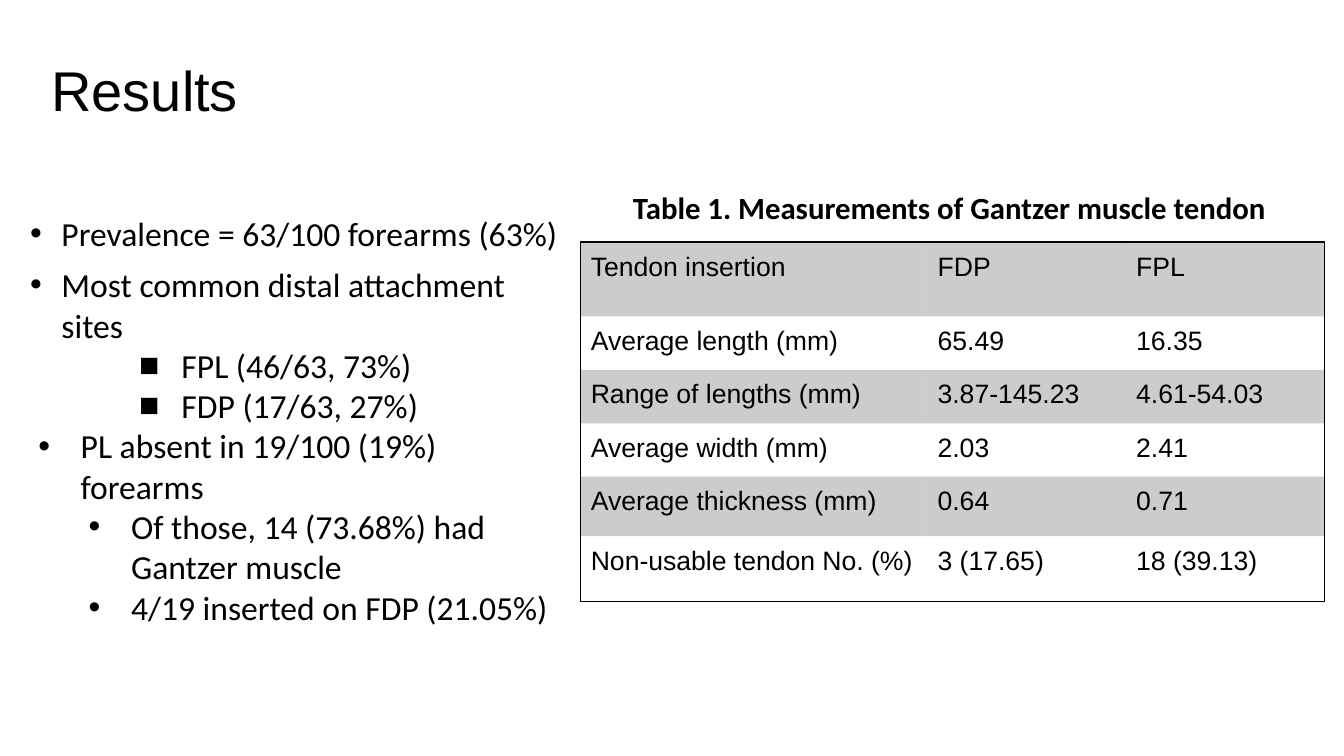
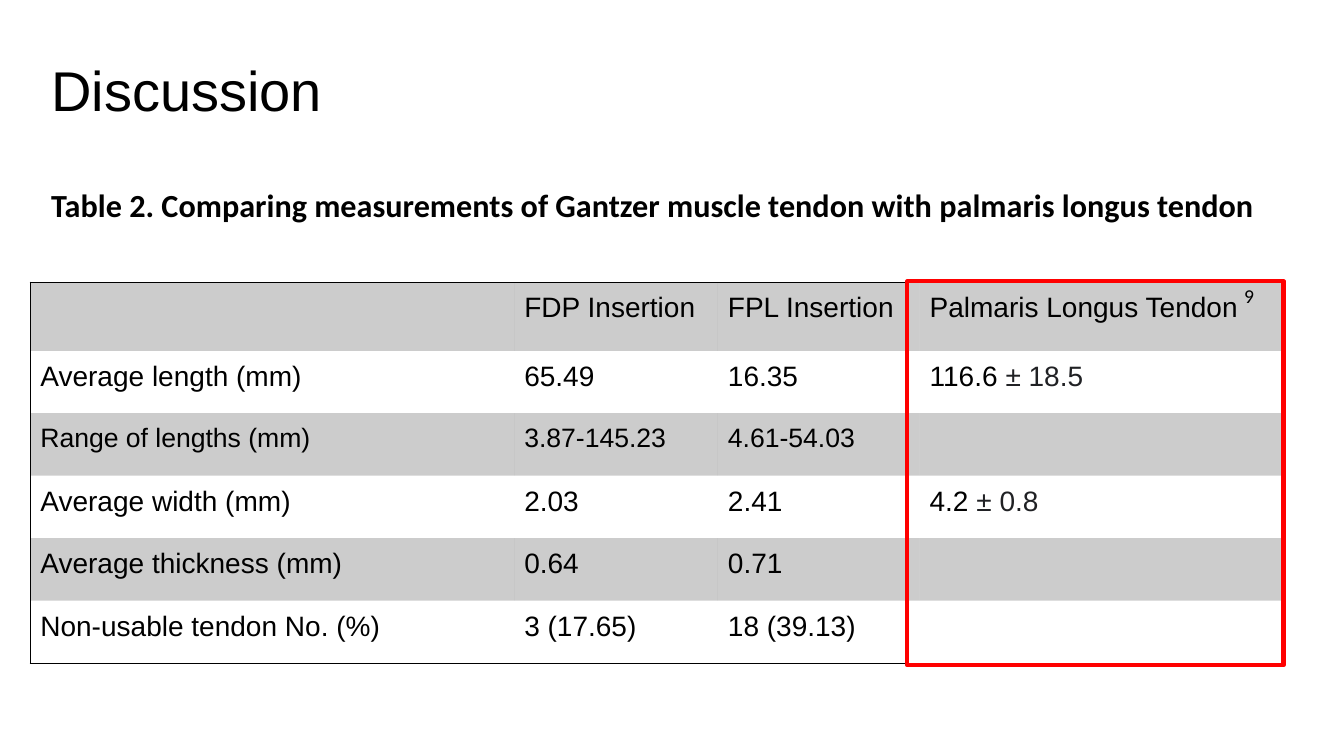
from lxml.etree import SubElement
from pptx import Presentation
from pptx.dml.color import RGBColor
from pptx.enum.shapes import MSO_SHAPE
from pptx.enum.text import MSO_ANCHOR, MSO_AUTO_SIZE, PP_ALIGN
from pptx.oxml.ns import qn
from pptx.util import Emu, Pt

PX = 9144  # 100 px to the inch
COLORS = {"ink": "000000", "muted": "202124", "highlight": "FF0000"}
HEADING, BODY = "Arial", "Calibri"
TITLE_ONLY, TWO_CONTENT = 5, 3
PLAIN_TABLE = "{2D5ABB26-0587-4C30-8999-92F81FD0307C}"
SHADE_ALPHA = 20000

# bullet style: (level, left margin, hanging indent, character)
MAIN = (0, 31, 35, "•")
SITE = (2, 150, 42, "■")
FINDING = (0, 50, 42, "•")
DETAIL = (1, 100, 42, "•")

MEASURES = [
    ("Average length (mm)", "65.49", "16.35"),
    ("Range of lengths (mm)", "3.87-145.23", "4.61-54.03"),
    ("Average width (mm)", "2.03", "2.41"),
    ("Average thickness (mm)", "0.64", "0.71"),
    ("Non-usable tendon No. (%)", "3 (17.65)", "18 (39.13)"),
]
PALMARIS = [("116.6 ", "± 18.5"), "", ("4.2 ", "± 0.8"), "", ""]


def px(*lengths):
    return [Emu(length * PX) for length in lengths]


def color(name):
    return RGBColor.from_string(COLORS[name])


class Deck:
    def __init__(self):
        self.prs = Presentation()
        self.prs.slide_width, self.prs.slide_height = px(1333, 750)
        self.slide = None

    def add_slide(self, layout, title):
        self.slide = self.prs.slides.add_slide(self.prs.slide_layouts[layout])
        heading = self.slide.shapes.title
        self.place(heading, (41, 50, 291, 77))
        frame = self.frame(heading, 5)
        frame.paragraphs[0].alignment = PP_ALIGN.LEFT
        self.run(frame.paragraphs[0], title, 40, HEADING)

    @staticmethod
    def place(shape, box):
        shape.left, shape.top, shape.width, shape.height = px(*box)

    @staticmethod
    def frame(shape, inset):
        """Give the text of a shape the common wrap, anchor and margins."""
        frame = shape.text_frame
        frame.word_wrap = True
        frame.auto_size = MSO_AUTO_SIZE.SHAPE_TO_FIT_TEXT
        frame.vertical_anchor = MSO_ANCHOR.TOP
        frame.margin_left, frame.margin_right = px(10, 10)
        frame.margin_top, frame.margin_bottom = px(inset, inset)
        return frame

    @staticmethod
    def run(paragraph, text, size, font, ink="ink", bold=False):
        run = paragraph.add_run()
        run.text = text
        run.font.size, run.font.name, run.font.bold = Pt(size), font, bold
        run.font.color.rgb = color(ink)

    def text(self, box, text, size, bold=False):
        frame = self.frame(self.slide.shapes.add_textbox(*px(*box)), 10)
        self.run(frame.paragraphs[0], text, size, BODY, bold=bold)

    @staticmethod
    def bullet(paragraph, level, margin, hanging, char):
        paragraph.level = level
        props = paragraph._p.get_or_add_pPr()
        props.set("marL", str(margin * PX))
        props.set("indent", str(-hanging * PX))
        bullet_color = SubElement(props, qn("a:buClr"))
        SubElement(bullet_color, qn("a:srgbClr"), val=COLORS["ink"])
        SubElement(props, qn("a:buFont"), typeface="Arial")
        SubElement(props, qn("a:buChar"), char=char)

    def bullets(self, placeholder, box, items, inset):
        body = self.slide.placeholders[placeholder]
        self.place(body, box)
        frame = self.frame(body, inset)
        for number, (style, text) in enumerate(items):
            paragraph = frame.add_paragraph() if number else frame.paragraphs[0]
            self.bullet(paragraph, *style)
            paragraph.space_before = Pt(0)
            self.run(paragraph, text, 24, BODY)

    @staticmethod
    def borders(cell, sides):
        for side in sides:
            line = SubElement(cell._tc.get_or_add_tcPr(), qn(f"a:ln{side}"), w=str(Pt(1)))
            fill = SubElement(line, qn("a:solidFill"))
            SubElement(fill, qn("a:srgbClr"), val=COLORS["ink"])

    @staticmethod
    def shade(cell):
        cell.fill.solid()
        cell.fill.fore_color.rgb = color("ink")
        fill = cell._tc.tcPr.find(qn("a:solidFill"))
        SubElement(fill[0], qn("a:alpha"), val=str(SHADE_ALPHA))

    def table(self, corner, widths, heights, rows, size, row_sizes=None):
        """Draw a framed table with every other row shaded; row_sizes overrides size."""
        box = px(*corner, sum(widths), sum(heights))
        table = self.slide.shapes.add_table(len(rows), len(widths), *box).table
        table._tbl.tblPr.find(qn("a:tableStyleId")).text = PLAIN_TABLE
        for column, width in zip(table.columns, px(*widths)):
            column.width = width
        for row, height in zip(table.rows, px(*heights)):
            row.height = height
        for r, row in enumerate(rows):
            row_size = (row_sizes or {}).get(r, size)
            for c, content in enumerate(row):
                cell = table.cell(r, c)
                cell.margin_left = cell.margin_right = Emu(10 * PX)
                cell.margin_top = cell.margin_bottom = Emu(10 * PX)
                edges = {"L": c == 0, "R": c == len(row) - 1,
                         "T": r == 0, "B": r == len(rows) - 1}
                self.borders(cell, [side for side, outer in edges.items() if outer])
                if r % 2:
                    cell.fill.background()
                else:
                    self.shade(cell)
                parts = (content,) if isinstance(content, str) else content
                for part, ink in zip(parts, ("ink", "muted")):
                    if part:
                        self.run(cell.text_frame.paragraphs[0], part, row_size, HEADING, ink)

    def outline(self, box):
        marker = self.slide.shapes.add_shape(MSO_SHAPE.RECTANGLE, *px(*box))
        marker.shadow.inherit = False
        marker.fill.background()
        marker.line.color.rgb = color("highlight")
        marker.line.width = Pt(3)


def results(deck):
    deck.add_slide(TWO_CONTENT, "Results")
    deck.bullets(1, (20, 201, 645, 61), [(MAIN, "Prevalence = 63/100 forearms (63%)")], 10)
    deck.bullets(2, (20, 257, 535, 374), [
        (MAIN, "Most common distal attachment sites"),
        (SITE, "FPL (46/63, 73%)"),
        (SITE, "FDP (17/63, 27%)"),
        (FINDING, "PL absent in 19/100 (19%) forearms"),
        (DETAIL, "Of those, 14 (73.68%) had Gantzer muscle"),
        (DETAIL, "4/19 inserted on FDP (21.05%)"),
    ], 5)
    deck.text((618, 177, 676, 94), "Table 1. Measurements of Gantzer muscle tendon", 22, True)
    deck.table((576, 240), [344, 197, 197], [74, 53, 53, 53, 59, 65],
               [("Tendon insertion", "FDP", "FPL"), *MEASURES], 19)


def discussion(deck):
    deck.add_slide(TITLE_ONLY, "Discussion")
    deck.text((1224, 272, 58, 44), "9", 14)
    deck.text((41, 174, 1221, 59), "Table 2. Comparing measurements of Gantzer muscle tendon "
              "with palmaris longus tendon", 23, True)
    header = ("", "FDP Insertion", "FPL Insertion", "Palmaris Longus Tendon")
    compared = [(*measure, palmaris) for measure, palmaris in zip(MEASURES, PALMARIS)]
    deck.table((30, 280), [480, 202, 200, 361], [68] + [62] * 5,
               [header, *compared], 20, {2: 19})
    deck.outline((900, 279, 373, 381))


def main():
    deck = Deck()
    results(deck)
    discussion(deck)
    deck.prs.save("out.pptx")


if __name__ == "__main__":
    main()
